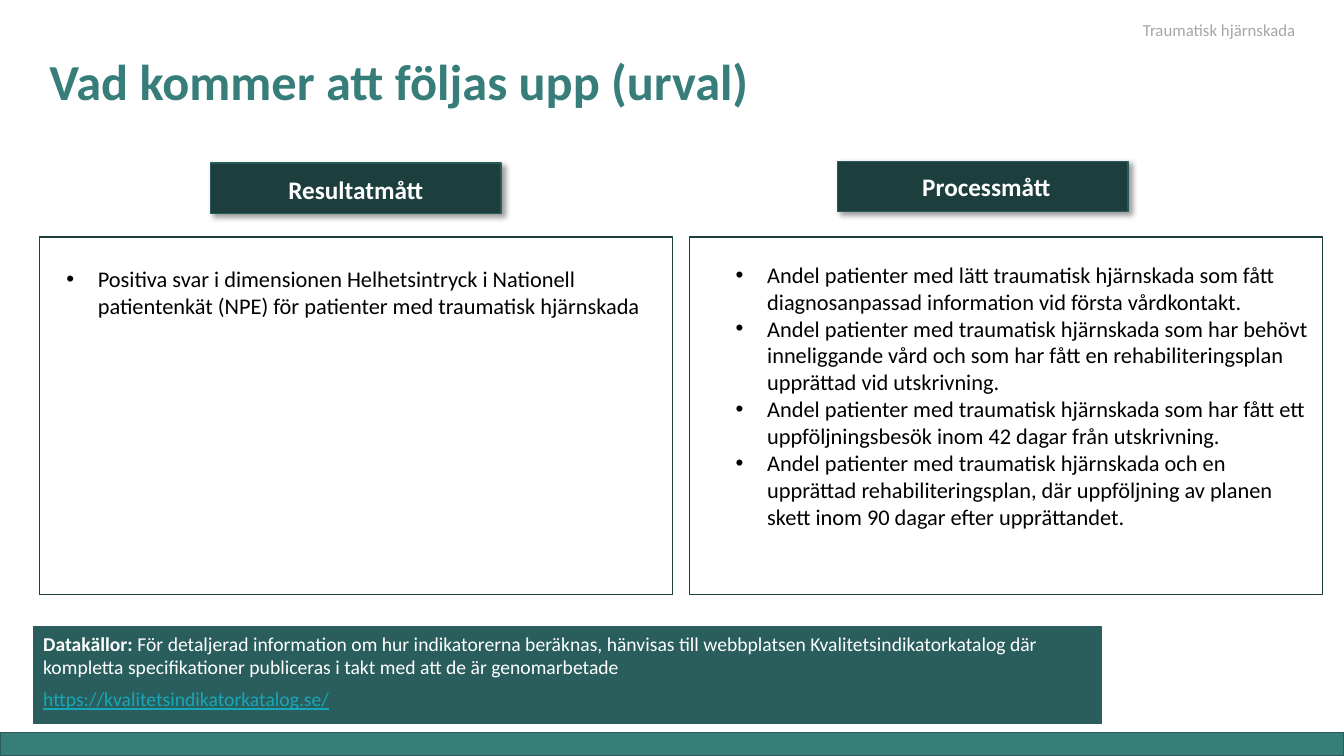
from lxml import etree
from pptx import Presentation
from pptx.dml.color import RGBColor
from pptx.enum.shapes import MSO_SHAPE
from pptx.enum.text import MSO_ANCHOR, MSO_AUTO_SIZE, PP_ALIGN
from pptx.oxml.ns import qn
from pptx.util import Pt

TEAL = RGBColor(0x37, 0x7D, 0x7A)
BORDER_TEAL = RGBColor(0x29, 0x5C, 0x5A)
SOURCE_TEAL = RGBColor(0x29, 0x5E, 0x5C)
DARK_TEAL = RGBColor(0x1C, 0x3E, 0x3D)
LINK_BLUE = RGBColor(0x18, 0xA7, 0xB8)
GREY = RGBColor(0xA6, 0xA6, 0xA6)
BLACK = RGBColor(0, 0, 0)
WHITE = RGBColor(0xFF, 0xFF, 0xFF)

RECTANGLE = MSO_SHAPE.RECTANGLE
TOP, MIDDLE, BOTTOM = MSO_ANCHOR.TOP, MSO_ANCHOR.MIDDLE, MSO_ANCHOR.BOTTOM
LEFT, CENTER = PP_ALIGN.LEFT, PP_ALIGN.CENTER
NO_AUTO_SIZE = MSO_AUTO_SIZE.NONE
GROW = MSO_AUTO_SIZE.SHAPE_TO_FIT_TEXT

FONT = "Calibri"
SLIDE_WIDTH, SLIDE_HEIGHT = 960, 540
COLUMN_SIZE = (452.2, 255.6)
BADGE_SIZE = (207.4, 36)
BULLET_WIDTH = 426.2
BULLET_INDENT = 22.5

RESULT_MEASURES = [
    "Positiva svar i dimensionen Helhetsintryck i Nationell patientenkät (NPE) "
    "för patienter med traumatisk hjärnskada",
]
PROCESS_MEASURES = [
    "Andel patienter med lätt traumatisk hjärnskada som fått diagnosanpassad "
    "information vid första vårdkontakt.",
    "Andel patienter med traumatisk hjärnskada som har behövt inneliggande vård "
    "och som har fått en rehabiliteringsplan upprättad vid utskrivning.",
    "Andel patienter med traumatisk hjärnskada som har fått ett "
    "uppföljningsbesök inom 42 dagar från utskrivning.",
    "Andel patienter med traumatisk hjärnskada och en upprättad "
    "rehabiliteringsplan, där uppföljning av planen skett inom 90 dagar efter "
    "upprättandet.",
]
SOURCE_NOTE = (
    "För detaljerad information om hur indikatorerna beräknas, hänvisas till "
    "webbplatsen Kvalitetsindikatorkatalog där kompletta specifikationer "
    "publiceras i takt med att de är genomarbetade"
)


def points(*lengths):
    """Convert numbers to lengths in points."""
    return [Pt(length) for length in lengths]


def add_run(paragraph, text, size, color, bold=False, underline=None):
    """Add one formatted run to a paragraph."""
    run = paragraph.add_run()
    run.text = text
    font = run.font
    font.name, font.size, font.bold = FONT, Pt(size), bold
    font.underline = underline
    font.color.rgb = color


def add_rectangle(slide, box, fill, border):
    """Add a flat rectangle with a thin border."""
    rectangle = slide.shapes.add_shape(RECTANGLE, *points(*box))
    rectangle.shadow.inherit = False
    rectangle.fill.solid()
    rectangle.fill.fore_color.rgb = fill
    rectangle.line.color.rgb = border
    rectangle.line.width = Pt(1)
    return rectangle


def add_text(slide, box, lines, size, color, bold=False, align=LEFT,
             anchor=TOP, auto_size=GROW):
    """Add a wrapped text box and return its paragraphs."""
    frame = slide.shapes.add_textbox(*points(*box)).text_frame
    frame.word_wrap = True
    frame.auto_size = auto_size
    frame.vertical_anchor = anchor
    for index, line in enumerate(lines):
        paragraph = frame.add_paragraph() if index else frame.paragraphs[0]
        paragraph.alignment = align
        add_run(paragraph, line, size, color, bold)
    return frame.paragraphs


def add_bullet(paragraph):
    """Give a paragraph a hanging round bullet."""
    properties = paragraph._p.get_or_add_pPr()
    properties.set("marL", str(Pt(BULLET_INDENT)))
    properties.set("indent", str(Pt(-BULLET_INDENT)))
    etree.SubElement(properties, qn("a:buFont"), typeface="Arial")
    etree.SubElement(properties, qn("a:buChar"), char="•")


def add_drop_shadow(shape):
    """Cast a soft shadow to the lower right."""
    effects = shape._element.spPr.find(qn("a:effectLst"))
    shadow = etree.SubElement(
        effects, qn("a:outerShdw"), blurRad=str(Pt(4)), dist=str(Pt(3)),
        dir="2700000", algn="tl", rotWithShape="0")
    color = etree.SubElement(shadow, qn("a:srgbClr"), val=str(BLACK))
    etree.SubElement(color, qn("a:alpha"), val="40000")


def add_title(slide, box):
    """Place and format the slide title."""
    title = slide.shapes.title
    title.left, title.top, title.width, title.height = points(*box)
    frame = title.text_frame
    frame.word_wrap = True
    frame.auto_size = NO_AUTO_SIZE
    frame.vertical_anchor = BOTTOM
    paragraph = frame.paragraphs[0]
    paragraph.alignment = LEFT
    paragraph.line_spacing = 0.9
    add_run(paragraph, "Vad kommer att följas upp (urval)", 36, TEAL, True)


def add_measure_column(slide, box, heading, measures, badge_offset,
                       label_offset, label_size, bullet_offset):
    """Add a framed list of measures under a shadowed heading."""
    left, top = box[:2]

    def shifted(offset):
        """Return a position relative to the column."""
        return left + offset[0], top + offset[1]

    add_rectangle(slide, box, WHITE, DARK_TEAL)
    badge = add_rectangle(slide, (*shifted(badge_offset), *BADGE_SIZE),
                          DARK_TEAL, BORDER_TEAL)
    add_drop_shadow(badge)
    add_text(slide, (*shifted(label_offset), *label_size), [heading], 18,
             WHITE, True, CENTER, MIDDLE, NO_AUTO_SIZE)
    bullet_height = 67.7 if len(measures) == 1 else 223.2
    bullet_box = (*shifted(bullet_offset), BULLET_WIDTH, bullet_height)
    for paragraph in add_text(slide, bullet_box, measures, 16, BLACK):
        add_bullet(paragraph)


def add_data_sources(slide, box):
    """Add the panel that tells where the indicators are described."""
    frame = add_rectangle(slide, box, SOURCE_TEAL, BORDER_TEAL).text_frame
    frame.word_wrap = True
    frame.vertical_anchor = TOP
    note = frame.paragraphs[0]
    note.alignment = LEFT
    add_run(note, "Datakällor: ", 14, WHITE, True)
    add_run(note, SOURCE_NOTE, 14, WHITE)
    address = frame.add_paragraph()
    address.alignment = LEFT
    address.space_before = Pt(6)
    add_run(address, "https://kvalitetsindikatorkatalog.se/", 14, LINK_BLUE,
            underline=True)


def main():
    """Build and save the follow-up slide."""
    presentation = Presentation()
    presentation.slide_width, presentation.slide_height = points(
        SLIDE_WIDTH, SLIDE_HEIGHT)
    slide = presentation.slides.add_slide(presentation.slide_layouts[5])

    add_rectangle(slide, (0, 523.4, SLIDE_WIDTH, 16.6), TEAL, BORDER_TEAL)
    add_title(slide, (28.1, 35.3, 720, 48.2))
    add_measure_column(
        slide, (28.1, 169.2, *COLUMN_SIZE), "Resultatmått", RESULT_MEASURES,
        badge_offset=(122.4, -52.6), label_offset=(0, -54),
        label_size=(452.2, 39.6), bullet_offset=(12.2, 16.6))
    add_measure_column(
        slide, (492.5, 169.2, *COLUMN_SIZE), "Processmått", PROCESS_MEASURES,
        badge_offset=(105.8, -54), label_offset=(-2.2, -59.8),
        label_size=(428.4, 47.5), bullet_offset=(25.9, 13.7))
    add_data_sources(slide, (23.8, 447.8, 763.2, 69.1))
    add_text(slide, (809.3, 10.8, 124.6, 21.6), ["Traumatisk hjärnskada"],
             12, GREY)
    presentation.save("out.pptx")


if __name__ == "__main__":
    main()
